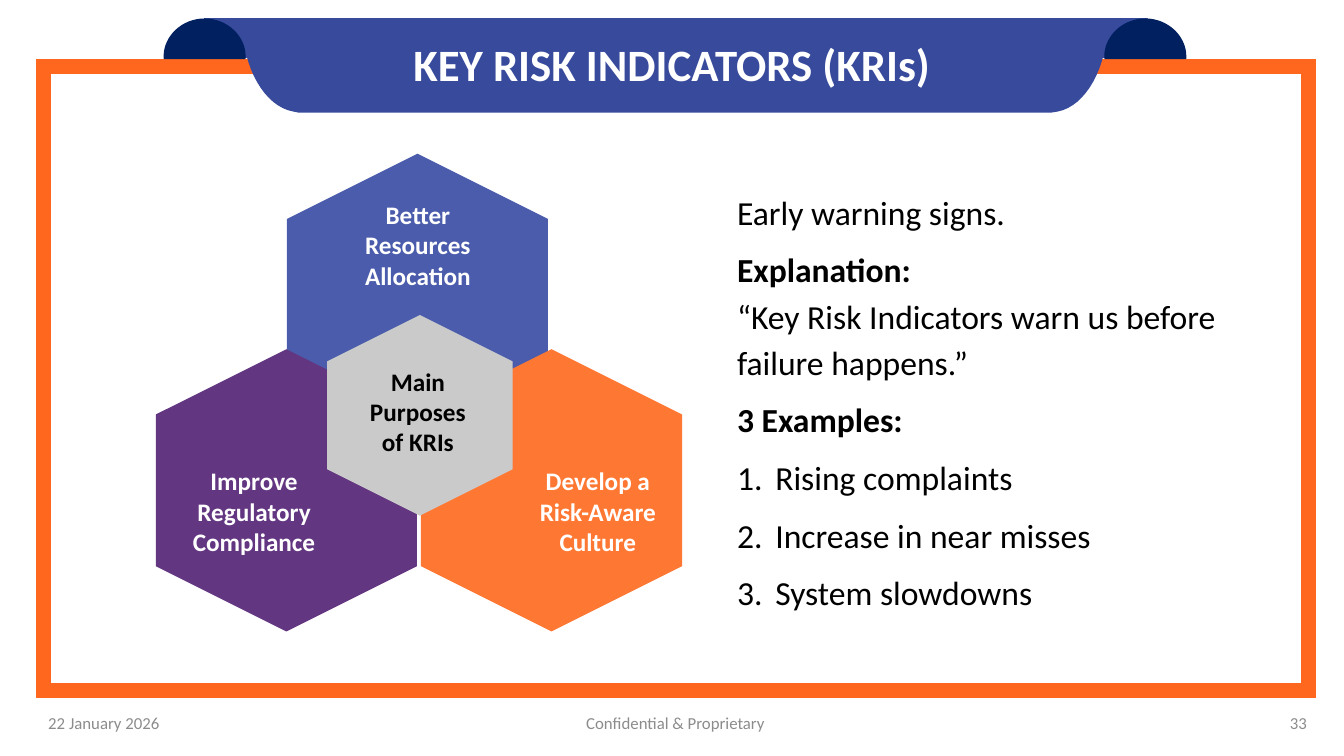
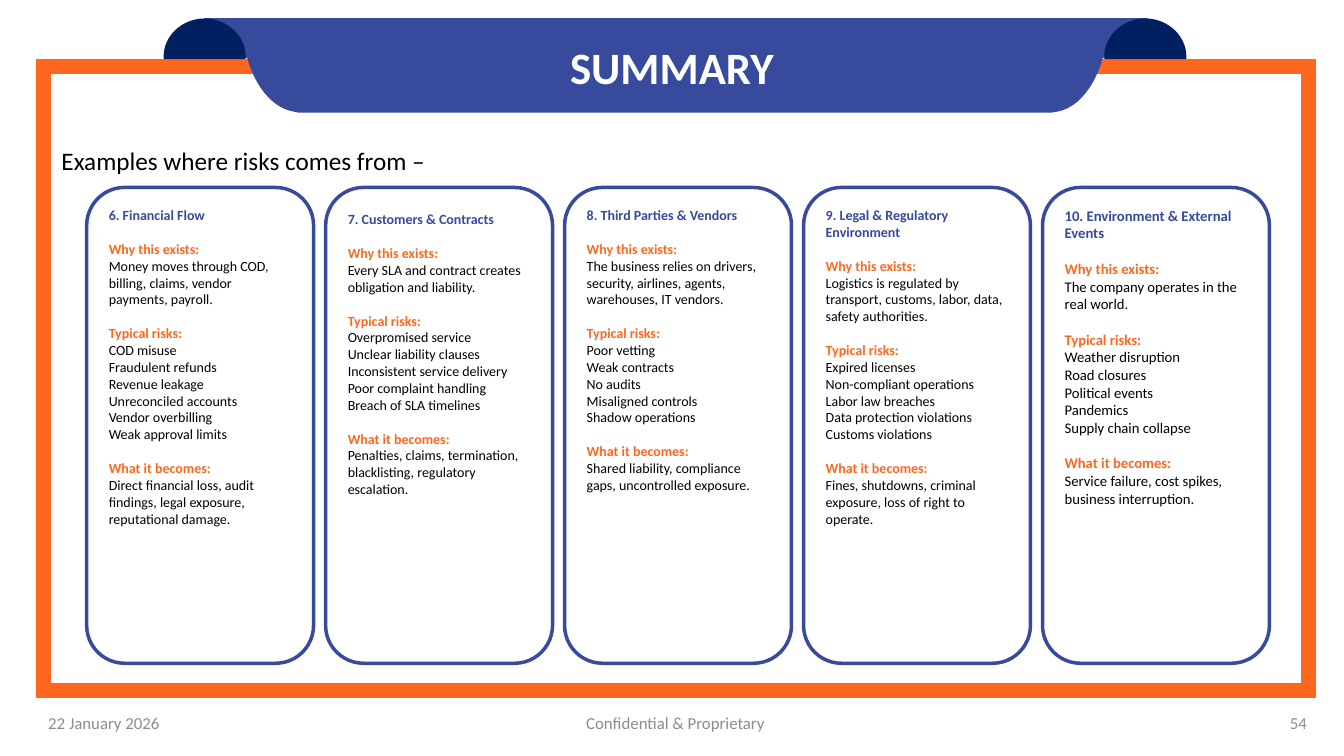
"""Build two risk management slides: key risk indicators and a summary."""
from typing import NamedTuple

from lxml.etree import SubElement
from pptx import Presentation
from pptx.dml.color import RGBColor as RGB
from pptx.enum.shapes import MSO_SHAPE as SHAPE
from pptx.enum.text import MSO_ANCHOR as ANCHOR, MSO_AUTO_SIZE as FIT, PP_ALIGN as ALIGN
from pptx.oxml.ns import qn
from pptx.util import Emu, Pt

PX = 9144
FONT = "Calibri"
BLUE = RGB(0x37, 0x4A, 0x9C)
NAVY = RGB(0x00, 0x20, 0x60)
ORANGE = RGB(0xFF, 0x67, 0x1F)
GREY = RGB(0x8C, 0x8C, 0x8C)
BLACK = RGB(0, 0, 0)
WHITE = RGB(255, 255, 255)
HEX_BLUE = RGB(0x4A, 0x5C, 0xAB)
HEX_ORANGE = RGB(0xFF, 0x78, 0x33)
HEX_PURPLE = RGB(0x63, 0x36, 0x81)
HEX_GREY = RGB(0xCA, 0xCA, 0xCA)

DATE = "22 January 2026"
NOTICE = "Confidential & Proprietary"

HEXAGONS = [
    ((274, 163, 280, 259), HEX_BLUE),
    ((407, 357, 280, 259), HEX_ORANGE),
    ((144, 357, 280, 259), HEX_PURPLE),
    ((317, 320, 199, 184), HEX_GREY),
]
HEX_LABELS = [
    ((348, 193, 133, 101), "Better Resources Allocation", WHITE),
    ((521, 457, 144, 101), "Develop a Risk-Aware Culture", WHITE),
    ((178, 457, 148, 101), "Improve Regulatory Compliance", WHITE),
    ((348, 358, 133, 101), "Main Purposes of KRIs", BLACK),
]
KRI_TEXT = [
    ("Early warning signs.", False, 8),
    ("Explanation:", True, 0),
    ("“Key Risk Indicators warn us before failure happens.”", False, 8),
    ("3 Examples:", True, 8),
]
KRI_EXAMPLES = ["Rising complaints", "Increase in near misses", "System slowdowns"]


class Card(NamedTuple):
    """Content of one risk source card."""
    title: str
    why: str
    risks: list
    becomes: str
    size: float = 10
    inset: int = 8


CARDS = [
    Card("6. Financial Flow",
         "Money moves through COD, billing, claims, vendor payments, payroll.",
         ["COD misuse", "Fraudulent refunds", "Revenue leakage",
          "Unreconciled accounts", "Vendor overbilling", "Weak approval limits"],
         "Direct financial loss, audit findings, legal exposure, reputational damage."),
    Card("7. Customers & Contracts",
         "Every SLA and contract creates obligation and liability.",
         ["Overpromised service", "Unclear liability clauses",
          "Inconsistent service delivery", "Poor complaint handling",
          "Breach of SLA timelines"],
         "Penalties, claims, termination, blacklisting, regulatory escalation.",
         inset=12),
    Card("8. Third Parties & Vendors",
         "The business relies on drivers, security, airlines, agents, warehouses, IT vendors.",
         ["Poor vetting", "Weak contracts", "No audits", "Misaligned controls",
          "Shadow operations"],
         "Shared liability, compliance gaps, uncontrolled exposure."),
    Card("9. Legal & Regulatory Environment",
         "Logistics is regulated by transport, customs, labor, data, safety authorities.",
         ["Expired licenses", "Non-compliant operations", "Labor law breaches",
          "Data protection violations", "Customs violations"],
         "Fines, shutdowns, criminal exposure, loss of right to operate."),
    Card("10. Environment & External Events",
         "The company operates in the real world.",
         ["Weather disruption", "Road closures", "Political events", "Pandemics",
          "Supply chain collapse"],
         "Service failure, cost spikes, business interruption.", size=10.5),
]


def px(n):
    """Turn px into EMU."""
    return Emu(round(n * PX))


def assign(obj, **values):
    """Set several attributes of one object."""
    for name, value in values.items():
        setattr(obj, name, value)


def place(sp, box):
    """Move and size a shape to a px box."""
    assign(sp, **dict(zip(("left", "top", "width", "height"), map(px, box))))


def paint(sp, fill=None, line=None, weight=1):
    """Give a shape its fill and line, without a shadow."""
    sp.shadow.inherit = False
    for part, color in ((sp.fill, fill), (sp.line.fill, line)):
        if color is None:
            part.background()
        else:
            part.solid()
            part.fore_color.rgb = color
    if line is not None:
        sp.line.width = Pt(weight)


def add_text(p, text, size, color=BLACK, bold=False, **layout):
    """Write one formatted run into a paragraph."""
    assign(p, **layout)
    r = p.add_run()
    r.text = text
    assign(r.font, name=FONT, size=Pt(size), bold=bold)
    r.font.color.rgb = color


def next_paragraph(tf):
    """Return the empty first paragraph, or add one."""
    last = tf.paragraphs[-1]
    return tf.add_paragraph() if last.runs else last


def set_bullet(p, tag="a:buNone", indent=0, **attrs):
    """Set the bullet and hanging indent of a paragraph."""
    pPr = p._p.get_or_add_pPr()
    pPr.set("marL", str(px(indent)))
    pPr.set("indent", str(px(-indent)))
    SubElement(pPr, qn(tag), **attrs)


def add_label(s, box, text, size, color, bold=False, align=ALIGN.LEFT, anchor=ANCHOR.TOP):
    """Add a one-paragraph text box."""
    tf = s.shapes.add_textbox(*map(px, box)).text_frame
    assign(tf, word_wrap=True, vertical_anchor=anchor)
    add_text(tf.paragraphs[0], text, size, color, bold, alignment=align)


def add_preset(s, kind, box, fill=None, line=None, weight=1):
    """Add a preset shape."""
    sp = s.shapes.add_shape(kind, *map(px, box))
    paint(sp, fill, line, weight)
    return sp


def bezier(a, b, c, d, steps=16):
    """Return points along a cubic curve."""
    points = []
    for i in range(steps + 1):
        t = i / steps
        u = 1 - t
        weights = (u ** 3, 3 * u * u * t, 3 * u * t * t, t ** 3)
        points.append(tuple(sum(w * q[k] for w, q in zip(weights, (a, b, c, d)))
                            for k in (0, 1)))
    return points


def add_outline(s, points, color):
    """Add a closed free outline in one colour."""
    points = [(px(x), px(y)) for x, y in points]
    builder = s.shapes.build_freeform(*points[0])
    builder.add_line_segments(points[1:], close=True)
    sp = builder.convert_to_shape()
    paint(sp, color, color)
    return sp


def add_curl(s, x):
    """Add one dark ribbon curl."""
    rise = bezier((x, 56), (x, 36), (x + 18, 19), (x + 40, 19))
    fall = bezier((x + 40, 19), (x + 62, 19), (x + 80, 36), (x + 80, 56))
    return add_outline(s, [(x, 58)] + rise + fall + [(x + 80, 58)], NAVY)


def add_ribbon(s):
    """Add the curved title ribbon."""
    right = bezier((1098, 21), (1098, 67), (1076, 105), (1049, 110))
    left = bezier((291, 110), (263, 105), (241, 67), (241, 21))
    return add_outline(s, [(241, 20), (1098, 20)] + right + [(1043, 111), (296, 111)] + left, BLUE)


def decorate_layout(layout, s):
    """Draw the frame and the ribbon, and hand them to the layout."""
    frame = add_preset(s, SHAPE.FRAME, (36, 59, 1269, 633), ORANGE, ORANGE)
    frame.adjustments[0] = 0.022
    band = add_preset(s, SHAPE.RECTANGLE, (203, 19, 935, 38), BLUE, BLUE)
    parts = [frame, band, add_ribbon(s), add_curl(s, 163), add_curl(s, 1096)]
    for i, sp in enumerate(parts, 100):
        sp.element.xpath("./p:nvSpPr/p:cNvPr")[0].set("id", str(i))
        layout.shapes.element.append(sp.element)


def set_title(s, text, top):
    """Place and write the slide title."""
    sp = s.shapes.title
    place(sp, (300, top, 733, 64))
    assign(sp.text_frame, word_wrap=True, auto_size=FIT.NONE, vertical_anchor=ANCHOR.MIDDLE)
    add_text(sp.text_frame.paragraphs[0], text, 32, WHITE, True, alignment=ALIGN.CENTER)


def open_body(s, box):
    """Place the body placeholder and return its text frame."""
    sp = s.placeholders[1]
    place(sp, box)
    assign(sp.text_frame, word_wrap=True, auto_size=FIT.NONE, vertical_anchor=ANCHOR.TOP)
    return sp.text_frame


def add_footer(s, number):
    """Add the date, the notice and the page number."""
    for left, width, text, align in ((38, 228, DATE, ALIGN.LEFT),
                                     (445, 450, NOTICE, ALIGN.CENTER),
                                     (1078, 228, number, ALIGN.RIGHT)):
        add_label(s, (left, 697, width, 40), text, 12, GREY, align=align, anchor=ANCHOR.MIDDLE)


def add_card(s, left, card):
    """Add one rounded card with its headed blocks."""
    sp = add_preset(s, SHAPE.ROUNDED_RECTANGLE, (left, 186, 225, 472), line=BLUE, weight=2.5)
    tf = sp.text_frame
    assign(tf, word_wrap=True, vertical_anchor=ANCHOR.TOP, margin_left=px(11),
           margin_right=px(11), margin_top=px(card.inset))
    add_text(next_paragraph(tf), card.title, card.size, BLUE, True, alignment=ALIGN.LEFT)
    for heading, lines in (("Why this exists:", [card.why]),
                           ("Typical risks:", card.risks),
                           ("What it becomes:", [card.becomes])):
        add_text(next_paragraph(tf), heading, card.size, ORANGE, True,
                 alignment=ALIGN.LEFT, space_before=Pt(card.size * 1.22))
        for line in lines:
            add_text(next_paragraph(tf), line, card.size, alignment=ALIGN.LEFT)


def build_indicators(s):
    """Fill the key risk indicators slide."""
    set_title(s, "KEY RISK INDICATORS (KRIs)", 31)
    tf = open_body(s, (721, 179, 500, 435))
    for text, bold, after in KRI_TEXT:
        p = next_paragraph(tf)
        set_bullet(p)
        add_text(p, text, 24, bold=bold, line_spacing=1.15,
                 space_before=Pt(0), space_after=Pt(after))
    for text in KRI_EXAMPLES:
        p = next_paragraph(tf)
        set_bullet(p, "a:buAutoNum", 38, type="arabicPeriod")
        add_text(p, text, 24, line_spacing=1.15, space_before=Pt(0), space_after=Pt(8))
    for box, color in HEXAGONS:
        add_preset(s, SHAPE.HEXAGON, box, color).rotation = 90
    for box, text, color in HEX_LABELS:
        add_label(s, box, text, 18, color, True, ALIGN.CENTER)
    add_footer(s, "33")


def build_summary(s):
    """Fill the summary slide."""
    set_title(s, "SUMMARY", 34)
    p = open_body(s, (51, 139, 420, 40)).paragraphs[0]
    set_bullet(p)
    add_text(p, "Examples where risks comes from –", 18, space_before=Pt(0))
    for i, card in enumerate(CARDS):
        add_card(s, 86 + i * 237, card)
    add_footer(s, "54")


def main():
    """Build and save the presentation."""
    prs = Presentation()
    assign(prs, slide_width=px(1333), slide_height=px(750))
    layout = prs.slide_layouts[1]
    indicators, summary = (prs.slides.add_slide(layout) for _ in range(2))
    decorate_layout(layout, indicators)
    build_indicators(indicators)
    build_summary(summary)
    prs.save("out.pptx")


if __name__ == "__main__":
    main()
